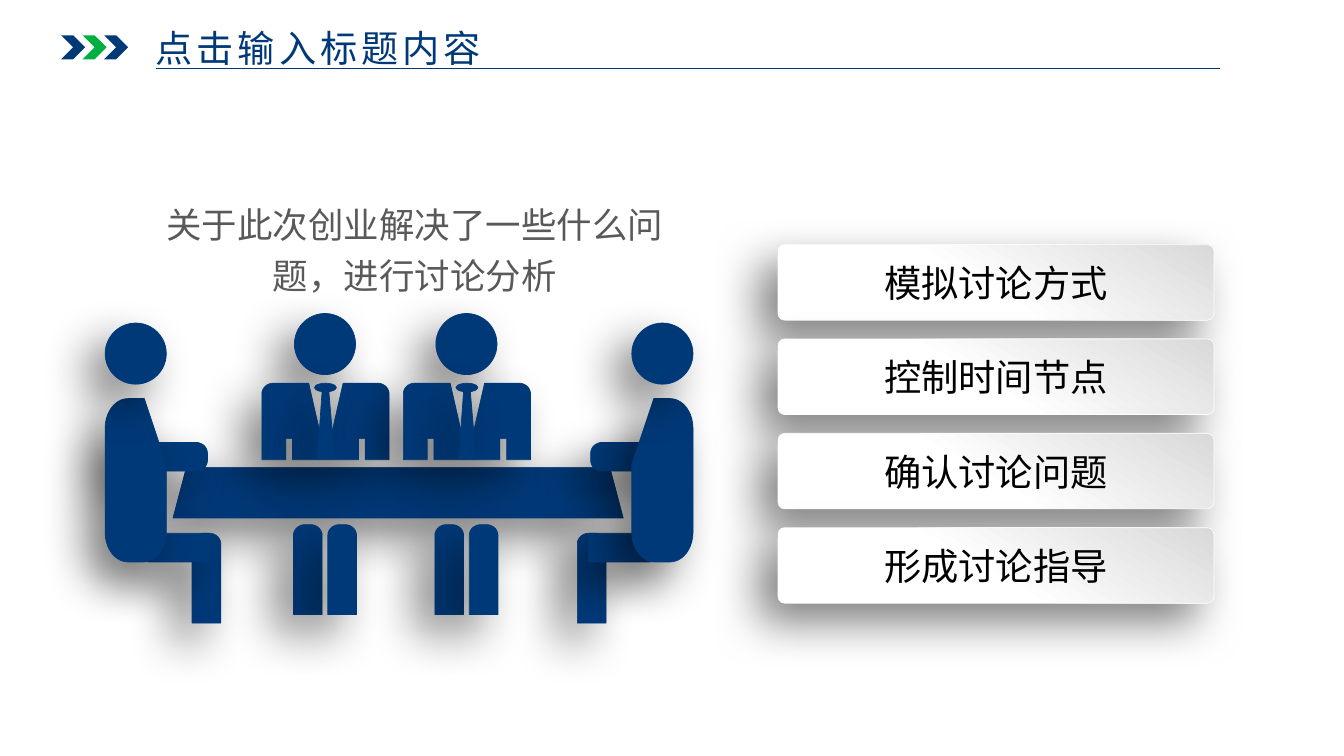
import math
from lxml import etree
from pptx import Presentation
from pptx import util as u
from pptx.dml.color import RGBColor
from pptx.enum import shapes, text
from pptx.oxml import ns

Inches = u.Inches
NAVY = RGBColor(0x00, 0x39, 0x78)
GREEN = RGBColor(0x01, 0xAF, 0x40)
GREY = RGBColor(0x59, 0x59, 0x59)
SILVER = RGBColor(0xD9, 0xD9, 0xD9)
WHITE = RGBColor(0xFF, 0xFF, 0xFF)
BLACK = RGBColor(0x00, 0x00, 0x00)
FONT = "Noto Sans CJK SC"

TITLE = "点击输入标题内容"
CAPTION = "关于此次创业解决了一些什么问题，进行讨论分析"
STEPS = ["模拟讨论方式", "控制时间节点", "确认讨论问题", "形成讨论指导"]
CHEVRON_COLORS = [NAVY, GREEN, NAVY]

SEAT_GAP = 1.48
MIRROR_SUM = 8.35
HEAD_SIZE = 0.64
SOFT = (0.12, 0.11)
ROUND = (0.24, 0.31)
TABLE = [(6.52, 5.42), (1.81, 5.42), (1.95, 4.89), (6.38, 4.89)]
JACKET = [
    (3.59, 4.01), (3.41, 4.8), (3.23, 4.01), (2.74, 4.01, SOFT), (2.74, 4.81),
    (2.99, 4.81), (2.99, 4.59), (3.06, 4.59), (3.06, 4.81), (3.75, 4.81),
    (3.75, 4.59), (3.82, 4.59), (3.82, 4.81), (4.07, 4.81), (4.07, 4.01, SOFT),
]
TIE = [(3.5, 4.8), (3.32, 4.8), (3.37, 4.09), (3.44, 4.09)]
FOREARM = [(1.22, 4.93), (2.17, 4.93, SOFT), (2.17, 4.63, SOFT), (1.22, 4.63)]
THIGH = [(2.19, 5.58), (1.44, 5.58, SOFT), (1.44, 5.88, SOFT), (2.19, 5.88)]
TORSO = [(1.51, 4.17), (1.1, 4.17, ROUND), (1.1, 5.88, ROUND),
         (1.74, 5.88, ROUND), (1.74, 4.86)]


def leg(left, top):
    right, bottom = left + 0.3, top + 0.94
    return [(right, bottom), (right, top, SOFT), (left, top, SOFT), (left, bottom)]


SIDE_PARTS = [FOREARM, leg(2.01, 5.58), THIGH, TORSO]


def toward(corner, neighbour, radii):
    dx, dy = neighbour[0] - corner[0], neighbour[1] - corner[1]
    share = radii[0 if abs(dx) > abs(dy) else 1] / math.hypot(dx, dy)
    return corner[0] + dx * share, corner[1] + dy * share


def rounded(corners, steps=10):
    points = []
    for index, corner in enumerate(corners):
        if len(corner) == 2:
            points.append(corner)
            continue
        start = toward(corner, corners[index - 1], corner[2])
        end = toward(corner, corners[(index + 1) % len(corners)], corner[2])
        for step in range(steps + 1):
            angle = math.pi / 2 * step / steps
            a, b = 1 - math.sin(angle), 1 - math.cos(angle)
            points.append(tuple(
                corner[axis] + a * (start[axis] - corner[axis])
                + b * (end[axis] - corner[axis]) for axis in (0, 1)))
    return points


def add_shadow(shape):
    shape.shadow.inherit = False
    effects = shape._element.spPr.find(ns.qn("a:effectLst"))
    outer = etree.SubElement(
        effects, ns.qn("a:outerShdw"), blurRad=str(u.Pt(35)), dist=str(u.Pt(20)),
        dir=str(135 * 60000), algn="tr", rotWithShape="0")
    color = etree.SubElement(outer, ns.qn("a:srgbClr"), val=str(BLACK))
    etree.SubElement(color, ns.qn("a:alpha"), val="50000")


def paint_figure(shape):
    shape.fill.solid()
    shape.fill.fore_color.rgb = NAVY
    shape.line.color.rgb = NAVY
    shape.line.width = u.Pt(0.5)
    add_shadow(shape)


def add_outline(group, corners, place=lambda x: x):
    points = [(place(x) * 1000, y * 1000) for x, y in rounded(corners)]
    builder = group.shapes.build_freeform(*points[0], scale=Inches(1) / 1000)
    builder.add_line_segments(points[1:], close=True)
    paint_figure(builder.convert_to_shape())


def add_oval(group, left, top, width, height):
    paint_figure(group.shapes.add_shape(
        shapes.MSO_SHAPE.OVAL, Inches(left), Inches(top), Inches(width), Inches(height)))


def write(frame, words, size, color, align, spacing=None):
    para = frame.paragraphs[0]
    para.alignment = align
    span = para.add_run()
    span.text = words
    span.font.size = u.Pt(size)
    span.font.color.rgb = color
    span.font.name = FONT
    props = span._r.get_or_add_rPr()
    etree.SubElement(props, ns.qn("a:ea"), typeface=FONT)
    if spacing:
        props.set("spc", str(spacing * 100))
    return para


def add_text(page, place, insets, *content):
    box = page.shapes.add_textbox(*map(Inches, place))
    frame = box.text_frame
    frame.word_wrap = True
    frame.auto_size = text.MSO_AUTO_SIZE.SHAPE_TO_FIT_TEXT
    frame.margin_left = frame.margin_right = Inches(insets[0])
    frame.margin_top = frame.margin_bottom = Inches(insets[1])
    return write(frame, *content)


def add_meeting(page):
    group = page.shapes.add_group_shape()
    add_outline(group, TABLE)
    seats = [0, SEAT_GAP]
    for shift in seats:
        for left in (3.07, 3.43):
            add_outline(group, leg(left + shift, 5.49))
    for shift in seats:
        add_oval(group, 3.08 + shift, 3.28, HEAD_SIZE, HEAD_SIZE)
        add_outline(group, JACKET, lambda x: x + shift)
        add_oval(group, 3.29 + shift, 4.01, 0.23, 0.09)
        add_outline(group, TIE, lambda x: x + shift)
    sides = [(1.1, lambda x: x), (MIRROR_SUM - 1.1 - HEAD_SIZE, lambda x: MIRROR_SUM - x)]
    for head_left, place in sides:
        for part in SIDE_PARTS:
            add_outline(group, part, place)
        add_oval(group, head_left, 3.38, HEAD_SIZE, HEAD_SIZE)


def add_step(page, index, words):
    button = page.shapes.add_shape(
        shapes.MSO_SHAPE.ROUNDED_RECTANGLE, Inches(8.14), Inches(2.56 + index * 0.987),
        Inches(4.56), Inches(0.79))
    button.adjustments[0] = 0.087
    button.fill.gradient()
    button.fill.gradient_angle = 60
    for stop, position, color in zip(button.fill.gradient_stops, (0.45, 1), (WHITE, SILVER)):
        stop.position = position
        stop.color.rgb = color
    button.line.color.rgb = WHITE
    button.line.width = u.Pt(0.5)
    add_shadow(button)
    button.text_frame.vertical_anchor = text.MSO_ANCHOR.MIDDLE
    write(button.text_frame, words, 28.1, BLACK, text.PP_ALIGN.CENTER)


def add_header(page):
    group = page.shapes.add_group_shape()
    for index, color in enumerate(CHEVRON_COLORS):
        chevron = group.shapes.add_shape(
            shapes.MSO_SHAPE.CHEVRON, Inches(0.64 + index * 0.225), Inches(0.37),
            Inches(0.25), Inches(0.25))
        chevron.shadow.inherit = False
        chevron.fill.solid()
        chevron.fill.fore_color.rgb = color
        chevron.line.fill.background()
    add_text(page, (1.55, 0.23, 4.29, 0.55), (0.08, 0.04),
             TITLE, 28, NAVY, text.PP_ALIGN.LEFT, 3)
    rule = page.shapes.add_connector(
        shapes.MSO_CONNECTOR.STRAIGHT, Inches(1.63), Inches(0.72), Inches(12.76), Inches(0.72))
    rule.line.color.rgb = NAVY
    rule.line.width = u.Pt(0.5)
    etree.SubElement(rule._element.spPr, ns.qn("a:effectLst"))


def main():
    deck = Presentation()
    deck.slide_width, deck.slide_height = Inches(14.06), Inches(7.91)
    page = deck.slides.add_slide(deck.slide_layouts[6])
    caption = add_text(page, (1.55, 1.99, 5.58, 1.18), (0.11, 0.05),
                       CAPTION, 26.7, GREY, text.PP_ALIGN.CENTER)
    caption.line_spacing = 1.2
    add_meeting(page)
    for index, words in enumerate(STEPS):
        add_step(page, index, words)
    add_header(page)
    deck.save("out.pptx")


if __name__ == "__main__":
    main()
